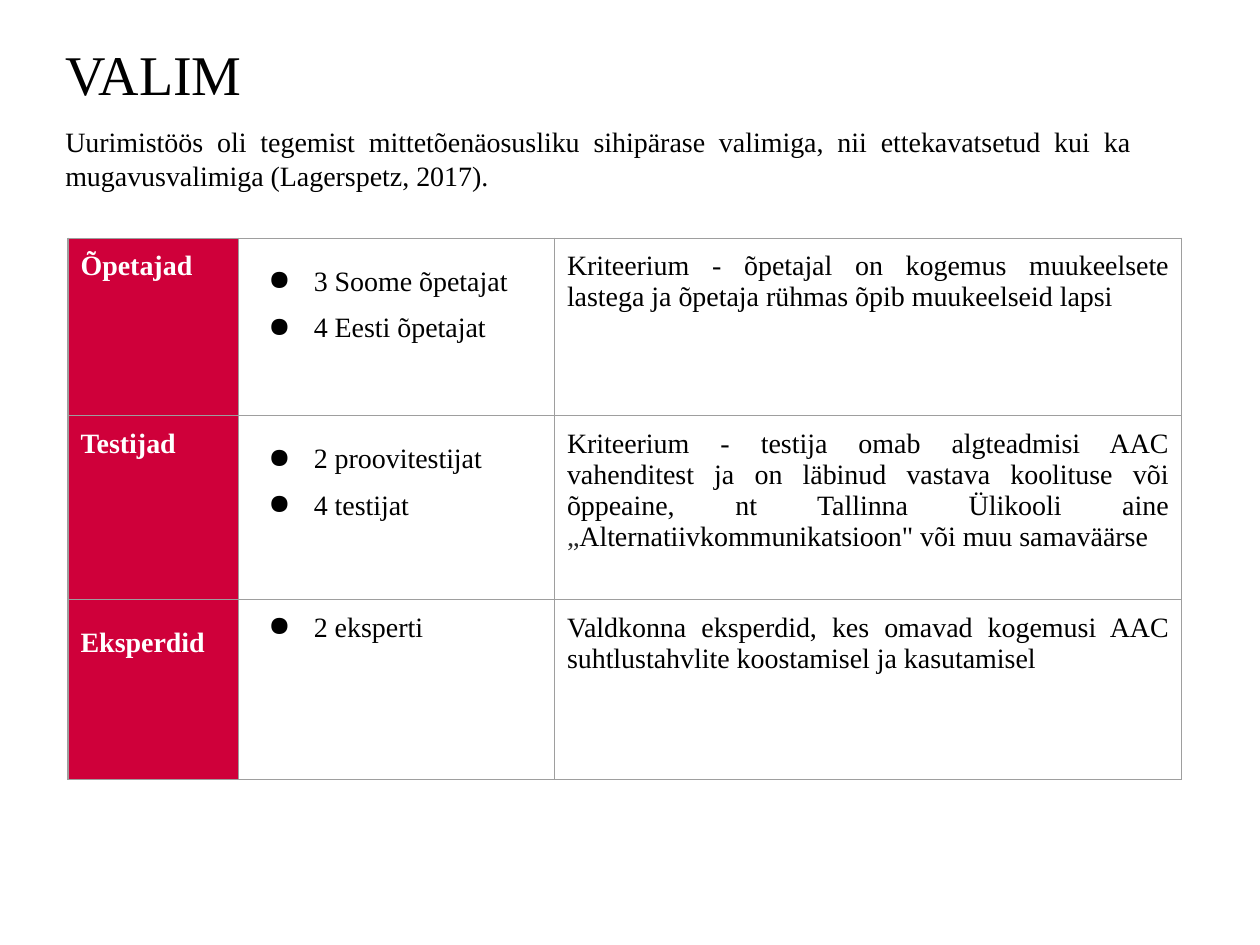
from lxml import etree
from pptx import Presentation
from pptx.dml.color import RGBColor
from pptx.enum.text import MSO_ANCHOR, PP_ALIGN
from pptx.oxml.ns import qn
from pptx.util import Inches, Pt

LEFT, JUSTIFY = PP_ALIGN.LEFT, PP_ALIGN.JUSTIFY
BOTTOM = MSO_ANCHOR.BOTTOM
FONT = "Times New Roman"
BLACK, WHITE, RED, GREY = "000000", "FFFFFF", "CF003A", "9E9E9E"


def rgb(color):
    return RGBColor.from_string(color)


def write(p, runs, size=16, color=BLACK, bold=False, align=JUSTIFY, spacing=None, bullet=False):
    p.alignment = align
    if spacing:
        p.line_spacing = spacing
    if bullet:
        pPr = p._p.get_or_add_pPr()
        pPr.set("marL", str(Inches(0.5)))
        pPr.set("indent", str(Inches(-0.36)))
        clr = etree.SubElement(pPr, qn("a:buClr"))
        etree.SubElement(clr, qn("a:srgbClr"), val=BLACK)
        etree.SubElement(pPr, qn("a:buChar"), char="●")
    for text, run_color in runs:
        r = p.add_run()
        r.text = text
        r.font.name = FONT
        r.font.size = Pt(size)
        r.font.bold = bold
        r.font.color.rgb = rgb(run_color or color)


prs = Presentation()
prs.slide_width, prs.slide_height = Inches(10), Inches(7.5)
s = prs.slides.add_slide(prs.slide_layouts[6])

title = s.shapes.add_textbox(Inches(0.42), Inches(0.13), Inches(8.71), Inches(0.77))
tf = title.text_frame
tf.word_wrap = True
tf.vertical_anchor = BOTTOM
write(tf.paragraphs[0], [("VALIM", None)], size=32, align=LEFT)

rows = [
    ("Õpetajad", LEFT, None, ["3 Soome õpetajat", "4 Eesti õpetajat"], 1.5,
     [("Kriteerium - õpetajal on kogemus muukeelsete lastega ja õpetaja rühmas õpib muukeelseid lapsi", None)]),
    ("Testijad", LEFT, None, ["2 proovitestijat", "4 testijat"], 1.5,
     [("Kriteerium - testija omab algteadmisi AAC vahenditest ja on läbinud vastava koolituse "
       "või õppeaine, nt Tallinna Ülikooli aine ", None),
      ("„", "282828"),
      ("Alternatiivkommunikatsioon\" või muu samaväärse", None)]),
    ("Eksperdid", JUSTIFY, 1.5, ["2 eksperti"], None,
     [("Valdkonna eksperdid, kes omavad kogemusi AAC suhtlustahvlite koostamisel ja kasutamisel", None)]),
]
col_widths = [1.35, 2.51, 4.98]
row_heights = [1.41, 1.46, 1.43]

table = s.shapes.add_table(len(rows), len(col_widths), Inches(0.54), Inches(1.89),
                           Inches(sum(col_widths)), Inches(sum(row_heights))).table
table.first_row = False
table.horz_banding = False
for col, width in zip(table.columns, col_widths):
    col.width = Inches(width)
for row, height in zip(table.rows, row_heights):
    row.height = Inches(height)

for i, (group, align, group_spacing, members, member_spacing, criterion) in enumerate(rows):
    group_cell, member_cell, criterion_cell = table.rows[i].cells
    write(group_cell.text_frame.paragraphs[0], [(group, None)], color=WHITE, bold=True,
          align=align, spacing=group_spacing)
    tf = member_cell.text_frame
    for j, member in enumerate(members):
        p = tf.add_paragraph() if j else tf.paragraphs[0]
        write(p, [(member, None)], align=JUSTIFY if i or j else LEFT,
              spacing=member_spacing, bullet=True)
    write(criterion_cell.text_frame.paragraphs[0], criterion)

    for cell in (group_cell, member_cell, criterion_cell):
        cell.margin_left = cell.margin_right = Inches(0.1)
        cell.margin_top = cell.margin_bottom = Inches(0.1)
        tcPr = cell._tc.get_or_add_tcPr()
        for side in ("lnL", "lnR", "lnT", "lnB"):
            ln = etree.SubElement(tcPr, qn(f"a:{side}"), w=str(Pt(0.75)))
            fill = etree.SubElement(ln, qn("a:solidFill"))
            etree.SubElement(fill, qn("a:srgbClr"), val=GREY)
        if cell is group_cell:
            cell.fill.solid()
            cell.fill.fore_color.rgb = rgb(RED)
        else:
            cell.fill.background()

intro = s.shapes.add_textbox(Inches(0.42), Inches(0.89), Inches(8.66), Inches(0.74))
tf = intro.text_frame
tf.word_wrap = True
tf.margin_left = tf.margin_right = tf.margin_top = tf.margin_bottom = Inches(0.1)
write(tf.paragraphs[0], [("Uurimistöös oli tegemist mittetõenäosusliku sihipärase valimiga, "
                          "nii ettekavatsetud kui ka mugavusvalimiga (Lagerspetz, 2017).", None)])

prs.save("out.pptx")
